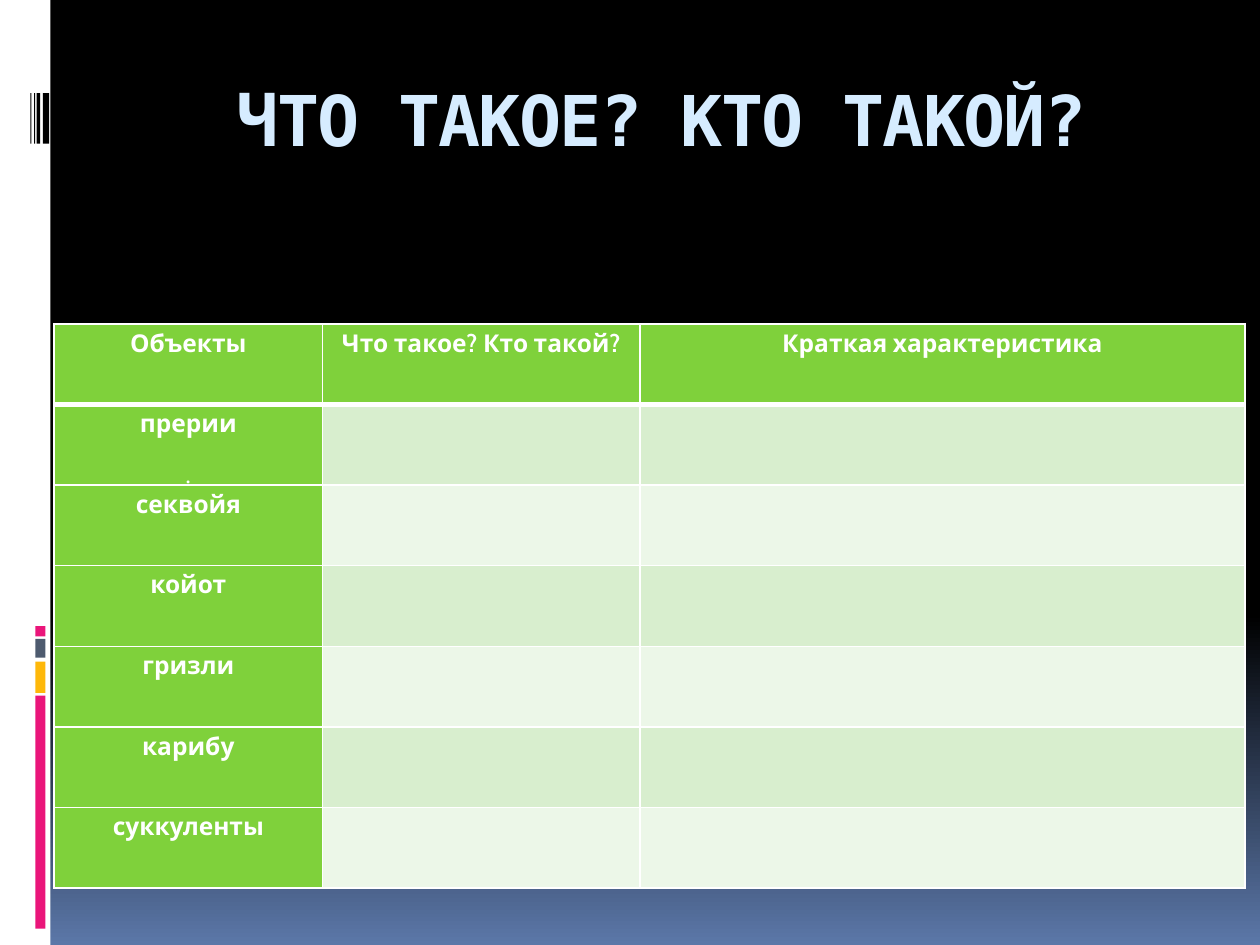
import pptx
import pptx.util
import pptx.dml.color
import pptx.enum.shapes
import pptx.enum.text
import pptx.oxml
import pptx.oxml.ns

Inches = pptx.util.Inches
Pt = pptx.util.Pt
ALIGN = pptx.enum.text.PP_ALIGN
ANCHOR = pptx.enum.text.MSO_ANCHOR

# Content
TITLE = "ЧТО ТАКОЕ? КТО ТАКОЙ?"
HEADINGS = ["Объекты", "Что такое? Кто такой?", "Краткая характеристика"]
OBJECTS = ["прерии", "секвойя", "койот", "гризли", "карибу", "суккуленты"]

WHITE, GREEN = "FFFFFF", "7FD13B"
BANDS = ["D8EECE", "ECF7E8"]
BACKGROUND_STOPS = [(0, "000000"), (65, "000000"), (100, "5B77A8")]
COLUMN_WIDTHS = [2.13, 2.52, 4.8]
ROW_HEIGHT = 0.64

# Side decoration: left, top, width, height, colour
SIDE_PANEL = [(0, 0, 0.4, 7.5, WHITE)]
COLOUR_BARS = [(0.28, top, 0.08, height, colour) for top, height, colour in [
    (5.52, 1.85, "EA157A"), (5.25, 0.25, "FEB80A"),
    (5.07, 0.15, "4E5B6F"), (4.97, 0.08, "EA157A")]]
BARCODE = [(left, 0.74, width, 0.4, "000000") for left, width in [
    (0.34, 0.05), (0.29, 0.03), (0.27, 0.01), (0.24, 0.01)]]


def rgb(colour):
    return pptx.dml.color.RGBColor.from_string(colour)


def xml(markup):
    return pptx.oxml.parse_xml(
        markup.replace(">", " " + pptx.oxml.ns.nsdecls("a") + ">", 1))


def write(frame, text, *, font, size, colour=WHITE, bold=False,
          align=ALIGN.LEFT, line_spacing=None, tracking=None):
    paragraph = frame.paragraphs[0]
    paragraph.alignment = align
    if line_spacing:
        paragraph.line_spacing = line_spacing
    run = paragraph.add_run()
    run.text = text
    run.font.name = font
    run.font.size = Pt(size)
    run.font.bold = bold
    run.font.color.rgb = rgb(colour)
    if tracking is not None:
        run.font._element.set("spc", str(int(tracking * 100)))


def add_text_box(slide, box, text, anchor, wrap, **text_format):
    frame = slide.shapes.add_textbox(*map(Inches, box)).text_frame
    frame.word_wrap = wrap
    frame.vertical_anchor = anchor
    write(frame, text, **text_format)


def set_borders(cell, bottom):
    properties = cell._tc.get_or_add_tcPr()
    widths = {"lnL": 1, "lnR": 1, "lnT": 1, "lnB": bottom}
    for position, (side, width) in enumerate(widths.items()):
        properties.insert(position, xml(
            f'<a:{side} w="{Pt(width)}"><a:solidFill><a:srgbClr val="{WHITE}"/>'
            f'</a:solidFill></a:{side}>'))


def set_background(slide):
    slide.background.fill.gradient()
    gradient = slide._element.xpath(".//p:bgPr/a:gradFill")[0]
    for child in list(gradient):
        gradient.remove(child)
    stops = "".join(
        f'<a:gs pos="{position * 1000}"><a:srgbClr val="{colour}"/></a:gs>'
        for position, colour in BACKGROUND_STOPS)
    gradient.append(xml(f"<a:gsLst>{stops}</a:gsLst>"))
    gradient.append(xml('<a:lin ang="5400000" scaled="0"></a:lin>'))


def add_objects_table(slide):
    rows = [HEADINGS] + [[name, "", ""] for name in OBJECTS]
    table = slide.shapes.add_table(
        len(rows), len(HEADINGS), Inches(0.43), Inches(2.57),
        Inches(sum(COLUMN_WIDTHS)), Inches(ROW_HEIGHT * len(rows))).table
    for column, width in zip(table.columns, COLUMN_WIDTHS):
        column.width = Inches(width)
    for r, row in enumerate(rows):
        table.rows[r].height = Inches(ROW_HEIGHT)
        for c, text in enumerate(row):
            cell = table.cell(r, c)
            cell.fill.solid()
            cell.fill.fore_color.rgb = rgb(GREEN if text else BANDS[(r - 1) % 2])
            set_borders(cell, bottom=3 if r == 0 else 1)
            if text:
                cell.margin_left = cell.margin_right = Inches(0.07)
                cell.margin_top = cell.margin_bottom = 0
                write(cell.text_frame, text, font="Cabin", size=14, bold=True,
                      align=ALIGN.CENTER, line_spacing=1.15)


def main():
    deck = pptx.Presentation()
    deck.slide_width, deck.slide_height = Inches(10), Inches(7.5)
    slide = deck.slides.add_slide(deck.slide_layouts[6])
    set_background(slide)

    # Side panel, colour bars and barcode
    for *box, colour in SIDE_PANEL + COLOUR_BARS + BARCODE:
        bar = slide.shapes.add_shape(
            pptx.enum.shapes.MSO_SHAPE.RECTANGLE, *map(Inches, box))
        bar.shadow.inherit = False
        bar.fill.solid()
        bar.fill.fore_color.rgb = rgb(colour)
        bar.line.fill.background()

    # Title, table and the separate full stop
    add_text_box(slide, (1, 0.56, 8.5, 1), TITLE, ANCHOR.TOP, True,
                 font="DejaVu Sans Mono", size=40, colour="D6ECFF", bold=True,
                 align=ALIGN.CENTER, tracking=-1)
    add_objects_table(slide)
    add_text_box(slide, (1.37, 3.59, 0.25, 0.34), ".", ANCHOR.MIDDLE, False,
                 font="Times New Roman", size=14)

    deck.save("out.pptx")


if __name__ == "__main__":
    main()
